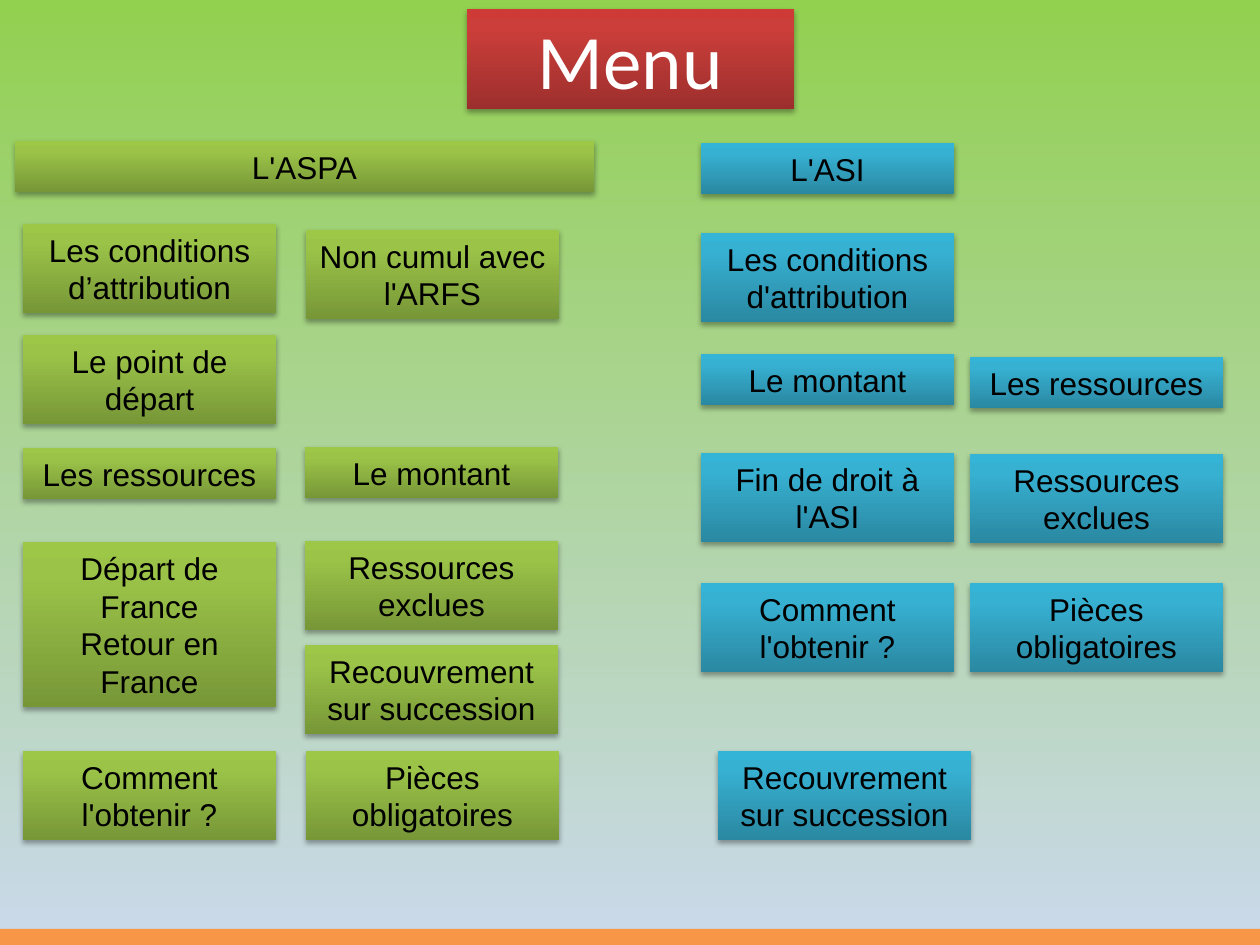
from lxml import etree
from pptx import Presentation
from pptx import util as u
from pptx.dml.color import RGBColor
from pptx.enum import shapes, text
from pptx.oxml import ns

PX_PER_INCH = 126
BUTTON_W = 253
LINE_H, BUTTON_PAD = 38, 13

# Gradient stops: position in percent, colour
SKY = [(0, "92D050"), (100, "CAD9EB")]
RED = [(0, "9C2F2D"), (80, "CB3E3A"), (100, "CE3B37")]
GREEN = [(0, "779737"), (80, "9BC348"), (100, "9DC746")]
BLUE = [(0, "2A88A2"), (80, "37B1D2"), (100, "34B4D6")]

# Buttons: left, top, lines of text, wording
ASPA_BUTTONS = [
    (23, 224, 2, "Les conditions d’attribution"),
    (23, 335, 2, "Le point de départ"),
    (23, 448, 1, "Les ressources"),
    (23, 542, 4, "Départ de France\nRetour en France"),
    (23, 751, 2, "Comment l'obtenir ?"),
    (306, 230, 2, "Non cumul avec l'ARFS"),
    (305, 447, 1, "Le montant"),
    (305, 541, 2, "Ressources exclues"),
    (305, 645, 2, "Recouvrement sur succession"),
    (306, 751, 2, "Pièces obligatoires"),
]
ASI_BUTTONS = [
    (701, 143, 1, "L'ASI"),
    (701, 233, 2, "Les conditions d'attribution"),
    (701, 354, 1, "Le montant"),
    (701, 453, 2, "Fin de droit à l'ASI"),
    (701, 583, 2, "Comment l'obtenir ?"),
    (718, 751, 2, "Recouvrement sur succession"),
    (970, 357, 1, "Les ressources"),
    (970, 454, 2, "Ressources exclues"),
    (970, 583, 2, "Pièces\nobligatoires"),
]


def px(length):
    return u.Inches(length / PX_PER_INCH)


def colour(hex_value):
    return RGBColor.from_string(hex_value)


def add_xml(parent, tag, **attributes):
    values = {key: str(value) for key, value in attributes.items()}
    return etree.SubElement(parent, ns.qn(tag), values)


def paint_gradient(fill, element, stops, angle):
    """Give the fill its own stops; the angle runs clockwise."""
    fill.gradient()
    gradient = element.find(".//" + ns.qn("a:gradFill"))
    for child in list(gradient):
        gradient.remove(child)
    stop_list = add_xml(gradient, "a:gsLst")
    for position, hex_value in stops:
        stop = add_xml(stop_list, "a:gs", pos=position * 1000)
        add_xml(stop, "a:srgbClr", val=hex_value)
    add_xml(gradient, "a:lin", ang=angle * 60000, scaled=0)


def style_panel(panel, stops):
    """Gradient from below, no outline and a soft shadow underneath."""
    paint_gradient(panel.fill, panel.element, stops, 270)
    panel.line.fill.background()
    panel.shadow.inherit = False
    effects = panel.element.spPr.find(ns.qn("a:effectLst"))
    shadow = add_xml(effects, "a:outerShdw", blurRad=u.Pt(3.1), dist=u.Pt(1.8),
                     dir=90 * 60000, rotWithShape=0)
    add_xml(add_xml(shadow, "a:srgbClr", val="000000"), "a:alpha", val=35000)


def write(panel, wording, font_name, size, hex_value):
    frame = panel.text_frame
    frame.text = wording
    frame.word_wrap = True
    frame.vertical_anchor = text.MSO_ANCHOR.MIDDLE
    for paragraph in frame.paragraphs:
        paragraph.alignment = text.PP_ALIGN.CENTER
        for run in paragraph.runs:
            run.font.name = font_name
            run.font.size = u.Pt(size)
            run.font.color.rgb = colour(hex_value)


def add_rectangle(slide, left, top, width, height):
    return slide.shapes.add_shape(shapes.MSO_SHAPE.RECTANGLE,
                                  px(left), px(top), px(width), px(height))


def add_button(slide, stops, left, top, lines, wording, width=BUTTON_W):
    button = add_rectangle(slide, left, top, width, BUTTON_PAD + LINE_H * lines)
    style_panel(button, stops)
    write(button, wording, "Arial", 18, "000000")
    button.text_frame.auto_size = text.MSO_AUTO_SIZE.SHAPE_TO_FIT_TEXT


def add_footer_band(slide):
    band = add_rectangle(slide, 0, 929, 1260, 16)
    band.fill.solid()
    band.fill.fore_color.rgb = colour("F79646")
    band.line.fill.background()
    band.shadow.inherit = False


def set_title(slide):
    title = slide.shapes.title
    title.left, title.top = px(467), px(9)
    title.width, title.height = px(327), px(100)
    style_panel(title, RED)
    write(title, "Menu", "Calibri", 44, "FFFFFF")


def main():
    deck = Presentation()
    deck.slide_width, deck.slide_height = px(1260), px(945)
    slide = deck.slides.add_slide(deck.slide_layouts[5])

    # Backdrop and heading
    paint_gradient(slide.background.fill, slide.element, SKY, 90)
    add_footer_band(slide)
    set_title(slide)

    # The two menus
    add_button(slide, GREEN, 15, 141, 1, "L'ASPA", width=579)
    for stops, buttons in ((GREEN, ASPA_BUTTONS), (BLUE, ASI_BUTTONS)):
        for button in buttons:
            add_button(slide, stops, *button)

    deck.save("out.pptx")


if __name__ == "__main__":
    main()
